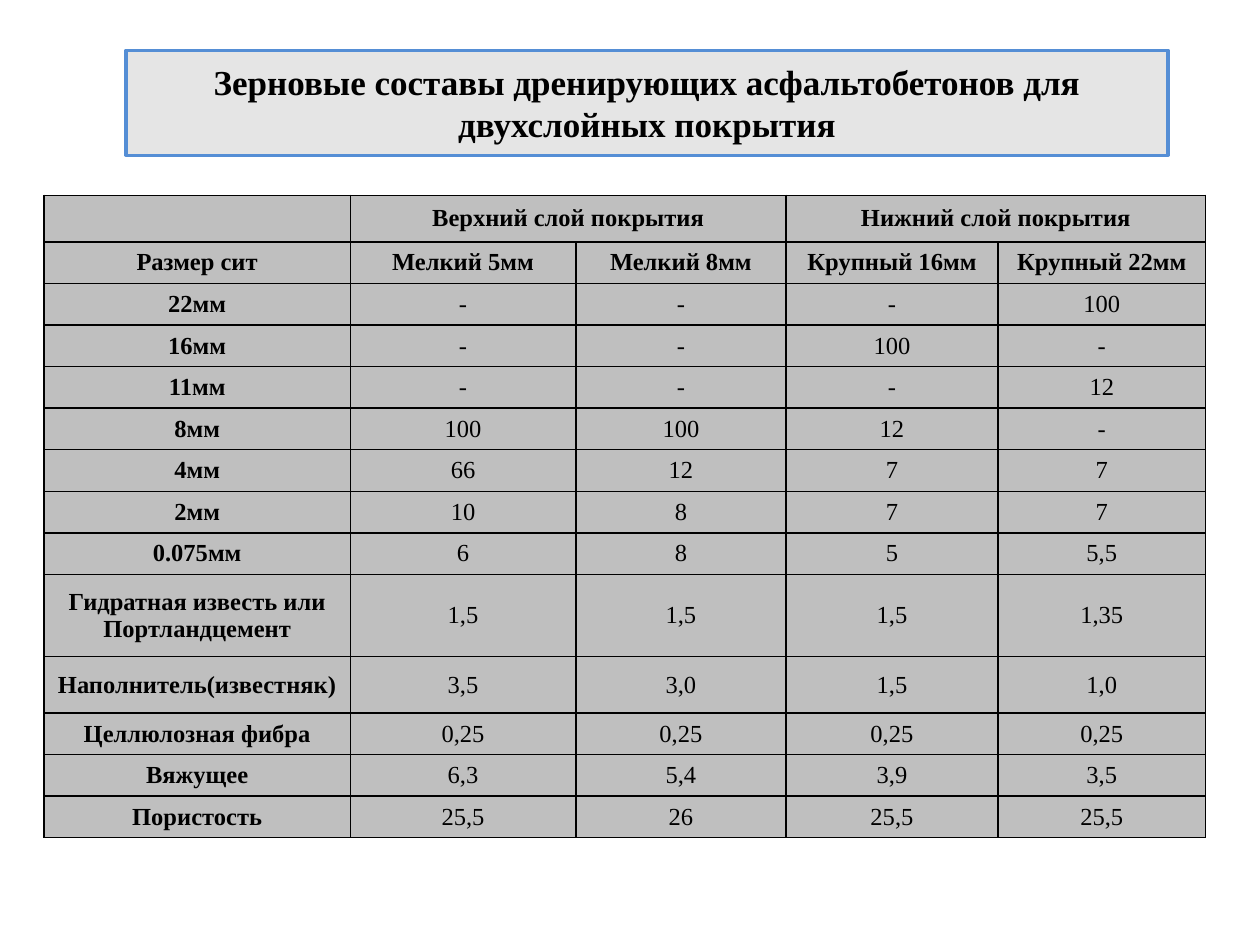
from lxml import etree
from pptx import Presentation
from pptx.dml.color import RGBColor
from pptx.enum.text import MSO_ANCHOR, MSO_AUTO_SIZE, PP_ALIGN
from pptx.oxml.ns import qn
from pptx.util import Inches, Pt

CENTER = PP_ALIGN.CENTER
MIDDLE = MSO_ANCHOR.MIDDLE
GROW = MSO_AUTO_SIZE.SHAPE_TO_FIT_TEXT

BLACK = RGBColor(0x00, 0x00, 0x00)
BLUE = RGBColor(0x55, 0x8E, 0xD5)
LIGHT_GREY = RGBColor(0xD9, 0xD9, 0xD9)
CELL_GREY = RGBColor(0xBF, 0xBF, 0xBF)
FONT = "Times New Roman"

TITLE = "Зерновые составы дренирующих асфальтобетонов для двухслойных покрытия"
COL_WIDTHS = [2.43, 1.79, 1.67, 1.68, 1.65]
ROW_HEIGHT = 0.33
TALL_ROWS = {0: 0.37, 9: 0.65, 10: 0.45}
HEADER_ROWS = 2
ROWS = [
    ["", "Верхний слой покрытия", "", "Нижний слой покрытия", ""],
    ["Размер сит", "Мелкий 5мм", "Мелкий 8мм", "Крупный 16мм", "Крупный 22мм"],
    ["22мм", "-", "-", "-", "100"],
    ["16мм", "-", "-", "100", "-"],
    ["11мм", "-", "-", "-", "12"],
    ["8мм", "100", "100", "12", "-"],
    ["4мм", "66", "12", "7", "7"],
    ["2мм", "10", "8", "7", "7"],
    ["0.075мм", "6", "8", "5", "5,5"],
    ["Гидратная известь или Портландцемент", "1,5", "1,5", "1,5", "1,35"],
    ["Наполнитель(известняк)", "3,5", "3,0", "1,5", "1,0"],
    ["Целлюлозная фибра", "0,25", "0,25", "0,25", "0,25"],
    ["Вяжущее", "6,3", "5,4", "3,9", "3,5"],
    ["Пористость", "25,5", "26", "25,5", "25,5"],
]


def write_text(tf, text, size, bold):
    p = tf.paragraphs[0]
    p.alignment = CENTER
    r = p.add_run()
    r.text = text
    for name, value in {"name": FONT, "size": Pt(size), "bold": bold}.items():
        setattr(r.font, name, value)
    r.font.color.rgb = BLACK


def set_fill(fill, color):
    fill.solid()
    fill.fore_color.rgb = color


def add_title(s):
    sp = s.shapes.title
    box = {"left": 1, "top": 0.43, "width": 8.27, "height": 0.77}
    for name, value in box.items():
        setattr(sp, name, Inches(value))
    set_fill(sp.fill, LIGHT_GREY)
    color = sp.fill._xPr.find(".//" + qn("a:srgbClr"))
    etree.SubElement(color, qn("a:alpha"), val="68000")
    sp.line.color.rgb = BLUE
    sp.line.width = Pt(1.75)
    tf = sp.text_frame
    tf.word_wrap = True
    tf.auto_size = GROW
    tf.vertical_anchor = MIDDLE
    write_text(tf, TITLE, 20, True)


def set_borders(cell):
    tc_pr = cell._tc.get_or_add_tcPr()
    # Borders come before the fill in the cell properties
    for i, side in enumerate(("lnL", "lnR", "lnT", "lnB")):
        ln = etree.Element(qn("a:" + side), w=str(Pt(1)))
        fill = etree.SubElement(ln, qn("a:solidFill"))
        etree.SubElement(fill, qn("a:srgbClr"), val=str(BLACK))
        tc_pr.insert(i, ln)


def format_cell(cell, text, bold):
    margins = {"margin_left": 0.07, "margin_right": 0.07,
               "margin_top": 0, "margin_bottom": 0}
    for name, value in margins.items():
        setattr(cell, name, Inches(value))
    cell.vertical_anchor = MIDDLE
    set_fill(cell.fill, CELL_GREY)
    set_borders(cell)
    if text:
        write_text(cell.text_frame, text, 14, bold)


def add_composition_table(s):
    heights = [TALL_ROWS.get(i, ROW_HEIGHT) for i in range(len(ROWS))]
    frame = s.shapes.add_table(
        len(ROWS), len(COL_WIDTHS), Inches(0.35), Inches(1.55),
        Inches(sum(COL_WIDTHS)), Inches(sum(heights)))
    table = frame.table
    table.first_row = False
    table.horz_banding = False
    for column, width in zip(table.columns, COL_WIDTHS):
        column.width = Inches(width)
    for row, height in zip(table.rows, heights):
        row.height = Inches(height)

    # Row labels and header rows are bold
    for i, values in enumerate(ROWS):
        for j, text in enumerate(values):
            format_cell(table.cell(i, j), text, i < HEADER_ROWS or j == 0)

    # Each layer heading spans its two mixes
    for j in (1, 3):
        table.cell(0, j).merge(table.cell(0, j + 1))


def main():
    prs = Presentation()
    prs.slide_width = Inches(10)
    prs.slide_height = Inches(7.5)
    s = prs.slides.add_slide(prs.slide_layouts[5])
    add_title(s)
    add_composition_table(s)
    prs.save("out.pptx")


if __name__ == "__main__":
    main()
